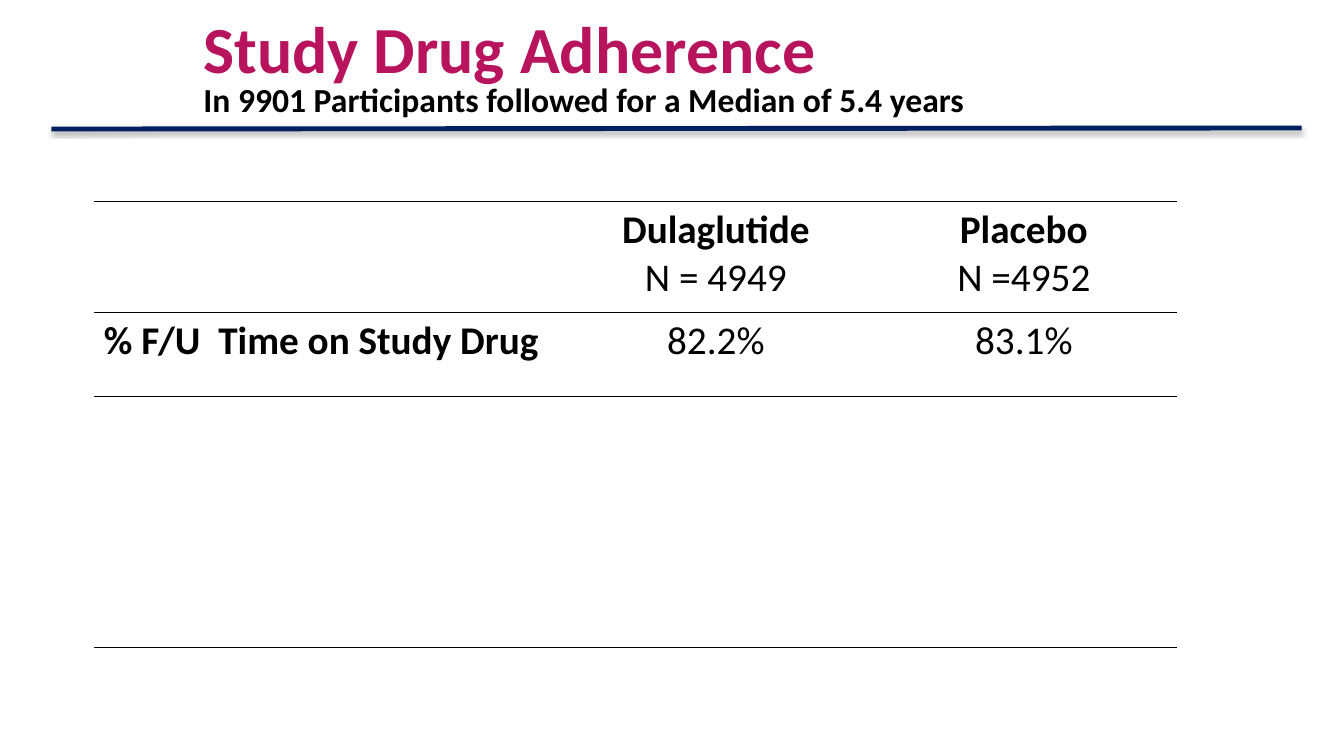
from lxml import etree
from pptx import Presentation
from pptx.dml.color import RGBColor
from pptx.enum import shapes, text
from pptx.oxml import ns
from pptx.util import Inches, Pt

INK = "000000"
NAVY = "002060"
MAGENTA = "B8145E"
COLUMNS = [4.63, 3.08, 3.03]
ROWS = [1.1] + [0.83] * 4
RULED_BELOW = {0, 1, 4}
ADHERENCE = [
    [[], [("Dulaglutide", True), ("N = 4949", False)], [("Placebo", True), ("N =4952", False)]],
    [[("% F/U  Time on Study Drug", True)], [("82.2%", False)], [("83.1%", False)]],
]


def color(value):
    return RGBColor.from_string(value)


def add_element(parent, tag, **attributes):
    return etree.SubElement(parent, ns.qn(tag), attributes)


def add_text(paragraph, words, size=28, fill=INK, bold=False, align=text.PP_ALIGN.LEFT):
    paragraph.alignment = align
    run = paragraph.add_run()
    run.text = words
    run.font.name = "Calibri"
    run.font.size = Pt(size)
    run.font.bold = bold
    run.font.color.rgb = color(fill)


def add_heading(slide):
    heading = slide.shapes.add_textbox(Inches(1.92), Inches(0.08), Inches(11.23), Inches(1.25))
    frame = heading.text_frame
    frame.word_wrap = True
    frame.vertical_anchor = text.MSO_ANCHOR.MIDDLE
    line = frame.paragraphs[0]
    line.line_spacing = 0.8
    add_text(line, "Study Drug Adherence", size=47, fill=MAGENTA, bold=True)
    line.add_line_break()
    add_text(line, "In 9901 Participants followed for a Median of 5.4 years", size=24, bold=True)


def add_heading_rule(slide):
    rule = slide.shapes.add_connector(
        shapes.MSO_CONNECTOR.STRAIGHT, Inches(0.51), Inches(1.28), Inches(12.91), Inches(1.27))
    rule.line.color.rgb = color(NAVY)
    rule.line.width = Pt(3.5)
    effects = add_element(rule._element.spPr, "a:effectLst")
    shadow = add_element(effects, "a:outerShdw", blurRad=str(Pt(3.1)), dist=str(Pt(1.8)),
                         dir="5400000", rotWithShape="0")
    shade = add_element(shadow, "a:srgbClr", val=INK)
    add_element(shade, "a:alpha", val="35000")


def set_borders(cell, ruled):
    properties = cell._tc.get_or_add_tcPr()
    for side in ("L", "R", "T", "B"):
        border = add_element(properties, f"a:ln{side}", w=str(Pt(1)))
        if side in ruled:
            fill = add_element(border, "a:solidFill")
            add_element(fill, "a:srgbClr", val=INK)
        else:
            add_element(border, "a:noFill")


def add_cell_text(cell, lines, align):
    for index, (words, bold) in enumerate(lines):
        frame = cell.text_frame
        paragraph = frame.add_paragraph() if index else frame.paragraphs[0]
        add_text(paragraph, words, bold=bold, align=align)


def add_adherence_table(slide):
    table = slide.shapes.add_table(
        len(ROWS), len(COLUMNS), Inches(0.93), Inches(2),
        Inches(sum(COLUMNS)), Inches(sum(ROWS))).table
    table.first_row = False
    table.horz_banding = False
    for column, width in zip(table.columns, COLUMNS):
        column.width = Inches(width)
    for r, height in enumerate(ROWS):
        table.rows[r].height = Inches(height)
        top = "T" if r == 0 or r - 1 in RULED_BELOW else ""
        bottom = "B" if r in RULED_BELOW else ""
        for c in range(len(COLUMNS)):
            cell = table.cell(r, c)
            set_borders(cell, top + bottom)
            cell.fill.background()
            if r < len(ADHERENCE):
                align = text.PP_ALIGN.CENTER if c else text.PP_ALIGN.LEFT
                add_cell_text(cell, ADHERENCE[r][c], align)


def main():
    deck = Presentation()
    deck.slide_width = Inches(13.33)
    deck.slide_height = Inches(7.5)
    slide = deck.slides.add_slide(deck.slide_layouts[6])
    add_heading_rule(slide)
    add_adherence_table(slide)
    add_heading(slide)
    deck.save("out.pptx")


if __name__ == "__main__":
    main()
